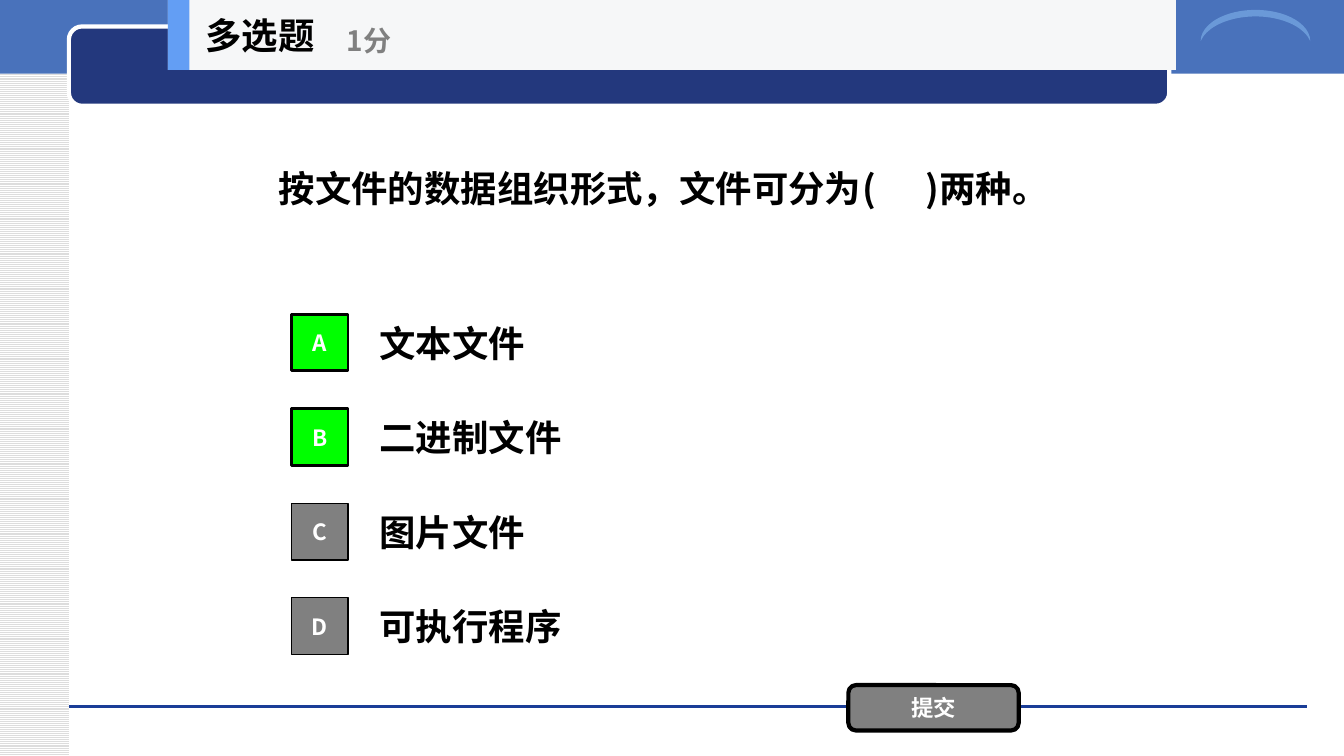
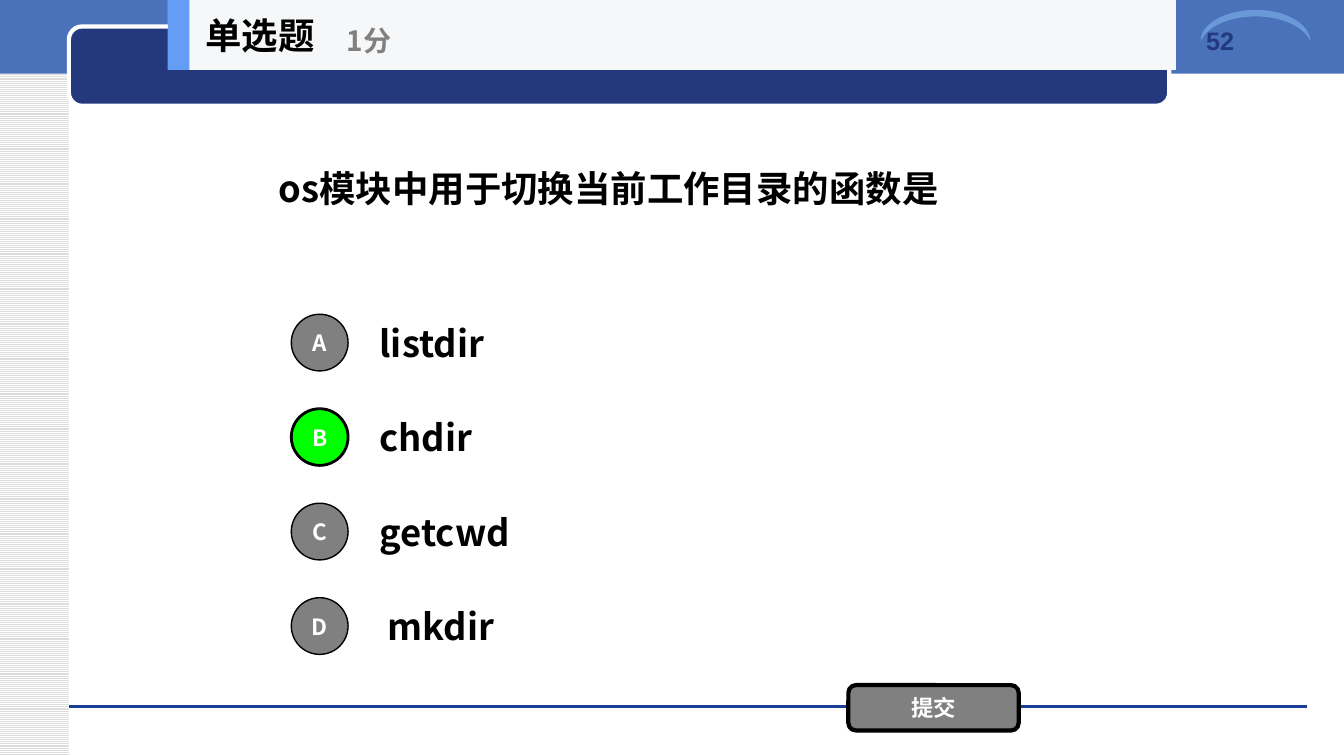
from pptx import Presentation
from pptx import util as u
from pptx.dml.color import RGBColor
from pptx.enum import dml, shapes, text
from pptx.oxml.ns import qn
from lxml import etree

# Grid: 40 columns by 8 rows
WIDTH, HEIGHT = u.Inches(13.333), u.Inches(7.5)
COL, ROW = WIDTH / 40, HEIGHT / 8

# Colours
WHITE = RGBColor(0xFF, 0xFF, 0xFF)
BLACK = RGBColor(0x00, 0x00, 0x00)
GRAY = RGBColor(0x80, 0x80, 0x80)
STRIPE = RGBColor(0xDD, 0xDD, 0xDD)
BAND = RGBColor(0x49, 0x72, 0xBB)
NAVY = RGBColor(0x23, 0x38, 0x7D)
RULE = RGBColor(0x1A, 0x3D, 0x97)
CRESCENT = RGBColor(0x6A, 0x99, 0xD8)
HEADER = RGBColor(0xF6, 0xF7, 0xF8)
ACCENT = RGBColor(0x63, 0x9E, 0xF4)
CORRECT = RGBColor(0x00, 0xFF, 0x00)

FONT = "Noto Sans CJK SC"
KIND = shapes.MSO_SHAPE
ALIGN = text.PP_ALIGN
ANCHOR = text.MSO_ANCHOR

QUESTIONS = [
    dict(kind="多选题", marker=KIND.RECTANGLE, answers="AB", page=None,
         question="按文件的数据组织形式，文件可分为(      )两种。",
         options=["文本文件", "二进制文件", "图片文件", "可执行程序"]),
    dict(kind="单选题", marker=KIND.OVAL, answers="B", page="52",
         question="os模块中用于切换当前工作目录的函数是",
         options=["listdir", "chdir", "getcwd", " mkdir"]),
]


def place(col, row, cols, rows):
    """Turn grid units into left, top, width and height."""
    return [round(n) for n in (col * COL, row * ROW, cols * COL, rows * ROW)]


def write(shape, words, size=26, color=BLACK, font=FONT,
          align=ALIGN.LEFT, anchor=ANCHOR.MIDDLE):
    frame = shape.text_frame
    frame.word_wrap = True
    frame.vertical_anchor = anchor
    paragraph = frame.paragraphs[0]
    paragraph.alignment = align
    run = paragraph.add_run()
    run.text = words
    run.font.size = u.Pt(size)
    run.font.bold = True
    run.font.color.rgb = color
    run.font.name = font
    east_asian = etree.SubElement(run.font._element, qn("a:ea"))
    east_asian.set("typeface", font)


def add_label(parent, box, words, **style):
    write(parent.add_textbox(*place(*box)), words, **style)


def add_block(parent, kind, box, fill, line=None, weight=1):
    block = parent.add_shape(kind, *place(*box))
    block.shadow.inherit = False
    block.fill.solid()
    block.fill.fore_color.rgb = fill
    if line is None:
        block.line.fill.background()
    else:
        block.line.color.rgb = line
        block.line.width = u.Pt(weight)
    return block


def add_button(parent, kind, box, words, fill, weight):
    button = add_block(parent, kind, box, fill, BLACK, weight)
    write(button, words, size=16, color=WHITE, align=ALIGN.CENTER)


def add_frame(parent):
    # Striped margin and top band
    margin = add_block(parent, KIND.RECTANGLE, (0, 0, 2.05, 8), WHITE)
    margin.fill.patterned()
    margin.fill.pattern = dml.MSO_PATTERN.LIGHT_HORIZONTAL
    margin.fill.fore_color.rgb = STRIPE
    margin.fill.back_color.rgb = WHITE
    add_block(parent, KIND.RECTANGLE, (0, -0.03, 40, 0.81), BAND)

    # Footer rule
    left, top, width, _ = place(2.05, 7.48, 36.85, 0)
    rule = parent.add_connector(shapes.MSO_CONNECTOR.STRAIGHT,
                                left, top, left + width, top)
    rule.line.color.rgb = RULE
    rule.line.width = u.Pt(0)
    etree.SubElement(rule._element.spPr, qn("a:effectLst"))

    # Title plate and crescent
    add_block(parent, KIND.ROUNDED_RECTANGLE, (2.05, 0.28, 32.75, 0.84),
              NAVY, WHITE, 3)
    crescent = add_block(parent, KIND.MOON, (36.9, -0.31, 0.93, 1.16), CRESCENT)
    crescent.adjustments[0] = 0.21
    crescent.rotation = 90


def add_header(parent, kind):
    header = parent.add_group_shape().shapes
    add_block(header, KIND.RECTANGLE, (5, 0, 30, 0.74), HEADER)
    add_block(header, KIND.RECTANGLE, (5, 0, 0.64, 0.74), ACCENT)
    add_label(header, (5.82, 0, 6.25, 0.74), kind)
    add_label(header, (10.02, 0.13, 7.5, 0.6), "1分", size=20, color=GRAY)


def add_options(parent, options, marker, answers):
    for index, (letter, option) in enumerate(zip("ABCD", options)):
        row = 3.25 + index
        fill, weight = (CORRECT, 2) if letter in answers else (GRAY, 1)
        add_label(parent, (11, row, 21, 0.75), option)
        add_button(parent, marker, (8.67, row + 0.075, 1.69, 0.6),
                   letter, fill, weight)


def add_question(deck, kind, marker, answers, page, question, options):
    parent = deck.slides.add_slide(deck.slide_layouts[6]).shapes
    add_frame(parent)
    if page:
        add_label(parent, (35.6, 0.22, 3.63, 0.76), page, size=18,
                  color=NAVY, font="Arial", anchor=ANCHOR.TOP)
    add_label(parent, (8, 0.74, 24, 2.5), question)
    add_options(parent, options, marker, answers)
    add_button(parent, KIND.ROUNDED_RECTANGLE, (25.25, 7.25, 5.07, 0.48),
               "提交", GRAY, 3)
    add_header(parent, kind)


def main():
    deck = Presentation()
    deck.slide_width, deck.slide_height = WIDTH, HEIGHT
    for content in QUESTIONS:
        add_question(deck, **content)
    deck.save("out.pptx")


if __name__ == "__main__":
    main()
